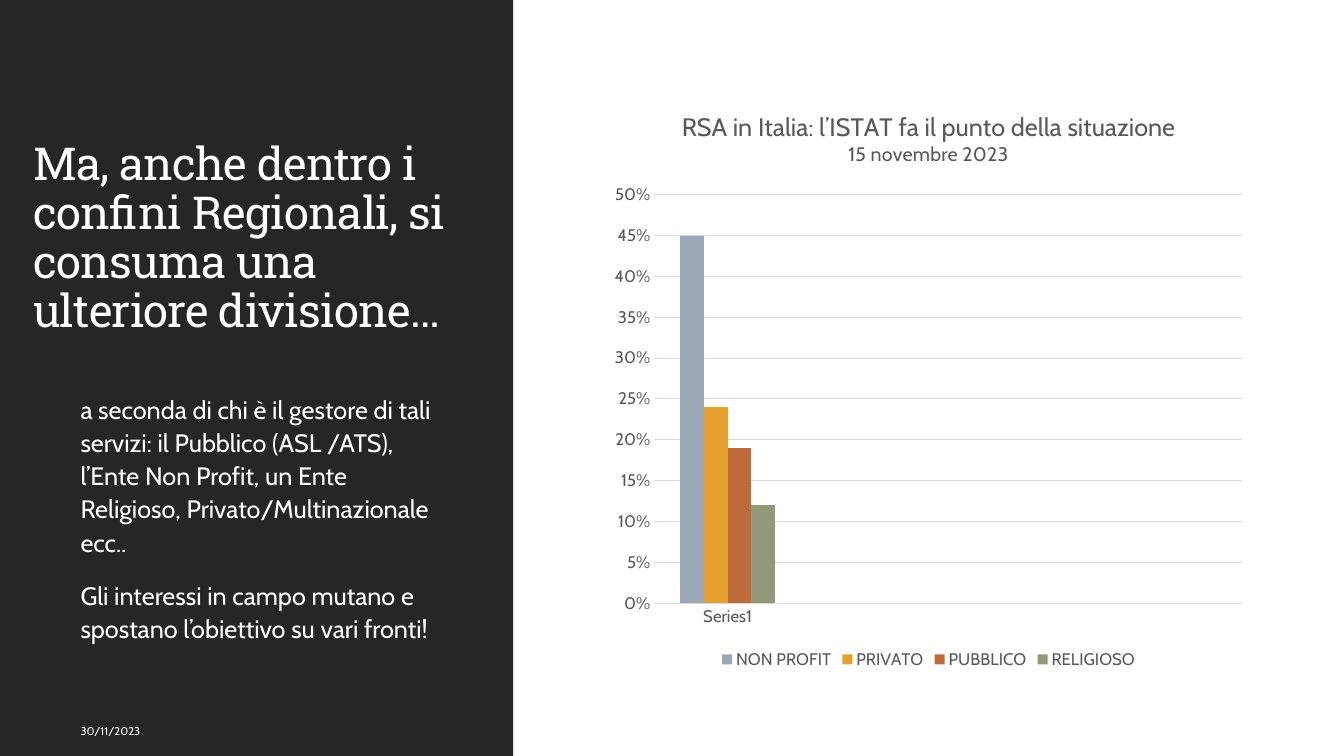
from lxml import etree
from pptx import Presentation, util as u
from pptx.chart.data import CategoryChartData
from pptx.dml.color import RGBColor
from pptx.enum import chart as charts, shapes, text
from pptx.oxml import ns


def color(value):
    """Turn a hex string into a colour."""
    return RGBColor.from_string(value)


def write(paragraph, content, size=18, font="Cabin", fill="FFFFFF", tracking=0, **spacing):
    """Put formatted text into a paragraph; a vertical tab breaks the line."""
    paragraph.text = content
    for name, value in spacing.items():
        setattr(paragraph, name, value)
    for run in paragraph.runs:
        run.font.size, run.font.name = u.Pt(size), font
        run.font.bold = False
        run.font.color.rgb = color(fill)
        if tracking:
            run.font._element.set("spc", str(round(tracking * 100)))


class SlideBuilder:
    """Hold the style and the current slide."""

    panel = "262626"
    muted = "595959"
    rule = "D9D9D9"
    font = "Cabin"

    def __init__(self, presentation):
        """Add a blank slide."""
        self.slide = presentation.slides.add_slide(presentation.slide_layouts[6])

    def rectangle(self, *box):
        """Draw a filled panel."""
        shape = self.slide.shapes.add_shape(
            shapes.MSO_SHAPE.RECTANGLE, *map(u.Inches, box))
        shape.shadow.inherit = False
        shape.fill.solid()
        shape.fill.fore_color.rgb = color(self.panel)
        shape.line.fill.background()

    def text(self, box, paragraphs, anchor=text.MSO_ANCHOR.TOP, **style):
        """Add a wrapped text box."""
        frame = self.slide.shapes.add_textbox(*map(u.Inches, box)).text_frame
        frame.word_wrap = True
        frame.vertical_anchor = anchor
        for index, content in enumerate(paragraphs):
            paragraph = frame.add_paragraph() if index else frame.paragraphs[0]
            write(paragraph, content, **style)

    def small_font(self, item):
        """Style the labels of an axis or a legend."""
        item.font.size, item.font.name = u.Pt(12), self.font
        item.font.color.rgb = color(self.muted)

    def thin_rule(self, line):
        """Style a chart line."""
        line.width = u.Pt(0.75)
        line.color.rgb = color(self.rule)

    def column_chart(self, box, title, categories, series, plot_area):
        """Add a clustered column chart; series map names to values and colours."""
        data = CategoryChartData(number_format="0%")
        data.categories = categories
        for name, (values, _) in series.items():
            data.add_series(name, values)
        chart = self.slide.shapes.add_chart(
            charts.XL_CHART_TYPE.COLUMN_CLUSTERED, *map(u.Inches, box), data).chart
        chart.font.size, chart.font.name = u.Pt(10), self.font

        frame = chart.chart_title.text_frame
        for index, (content, size) in enumerate(title):
            paragraph = frame.add_paragraph() if index else frame.paragraphs[0]
            write(paragraph, content, size, fill=self.muted)
        chart.chart_title.include_in_layout = False

        chart.has_legend = True
        chart.legend.position = charts.XL_LEGEND_POSITION.BOTTOM
        chart.legend.include_in_layout = False
        self.small_font(chart.legend)

        for axis in (chart.category_axis, chart.value_axis):
            axis.major_tick_mark = axis.minor_tick_mark = charts.XL_TICK_MARK.NONE
            self.small_font(axis.tick_labels)
        self.thin_rule(chart.category_axis.format.line)
        values_axis = chart.value_axis
        values_axis.minimum_scale, values_axis.maximum_scale = 0, 0.5
        values_axis.major_unit = 0.05
        values_axis.format.line.fill.background()
        self.thin_rule(values_axis.major_gridlines.format.line)

        plot = chart.plots[0]
        plot.gap_width, plot.overlap, plot.vary_by_categories = 219, 0, False
        for bars, (_, fill) in zip(plot.series, series.values()):
            bars.format.fill.solid()
            bars.format.fill.fore_color.rgb = color(fill)
        self.place_plot(chart, plot_area)

    def place_plot(self, chart, plot_area):
        """Fix the inner plot area as fractions of the chart."""
        area = chart._chartSpace.chart.plotArea
        for old in area.findall(ns.qn("c:layout")):
            area.remove(old)
        layout = etree.Element(ns.qn("c:layout"))
        manual = etree.SubElement(layout, ns.qn("c:manualLayout"))
        settings = [("layoutTarget", "inner"), ("xMode", "edge"), ("yMode", "edge")]
        for tag, value in settings + list(zip("xywh", plot_area)):
            etree.SubElement(manual, ns.qn("c:" + tag)).set("val", str(value))
        area.insert(0, layout)


def main():
    """Build and save the slide."""
    presentation = Presentation()
    presentation.slide_width = u.Inches(13.33)
    presentation.slide_height = u.Inches(7.5)
    builder = SlideBuilder(presentation)

    builder.rectangle(0, 0, 5.09, 7.5)
    builder.text(
        (0.23, 0.86, 4.52, 2.54),
        ["Ma, anche dentro i confini Regionali, si consuma una ulteriore divisione…"],
        anchor=text.MSO_ANCHOR.BOTTOM, size=32.4, font="Roboto Slab",
        tracking=-0.5, line_spacing=0.9)
    builder.column_chart(
        (5.97, 0.89, 6.48, 5.79),
        [("RSA in Italia: l’ISTAT fa il punto della situazione", 18),
         ("15 novembre 2023", 14)],
        ["Series1", "", "", ""],
        {"NON PROFIT": ([0.45, None, None, None], "9BA8B7"),
         "PRIVATO": ([0.24, None, None, None], "E6A02E"),
         "PUBBLICO": ([0.19, None, None, None], "BF6A3B"),
         "RELIGIOSO": ([0.12, None, None, None], "92987A")},
        plot_area=(0.08, 0.18, 0.9, 0.7))
    builder.text(
        (0.7, 3.83, 3.85, 2.84),
        ["a seconda di chi è il gestore di tali\vservizi: il Pubblico (ASL /ATS), "
         "l’Ente Non Profit, un Ente Religioso, Privato/Multinazionale ecc..",
         "Gli interessi in campo mutano e spostano l’obiettivo su vari fronti!"],
        line_spacing=1.1, space_before=u.Pt(12), space_after=u.Pt(2))
    builder.text((0.7, 7.05, 3.85, 0.4), ["30/11/2023"],
                 anchor=text.MSO_ANCHOR.MIDDLE, size=8)
    presentation.save("out.pptx")


if __name__ == "__main__":
    main()
